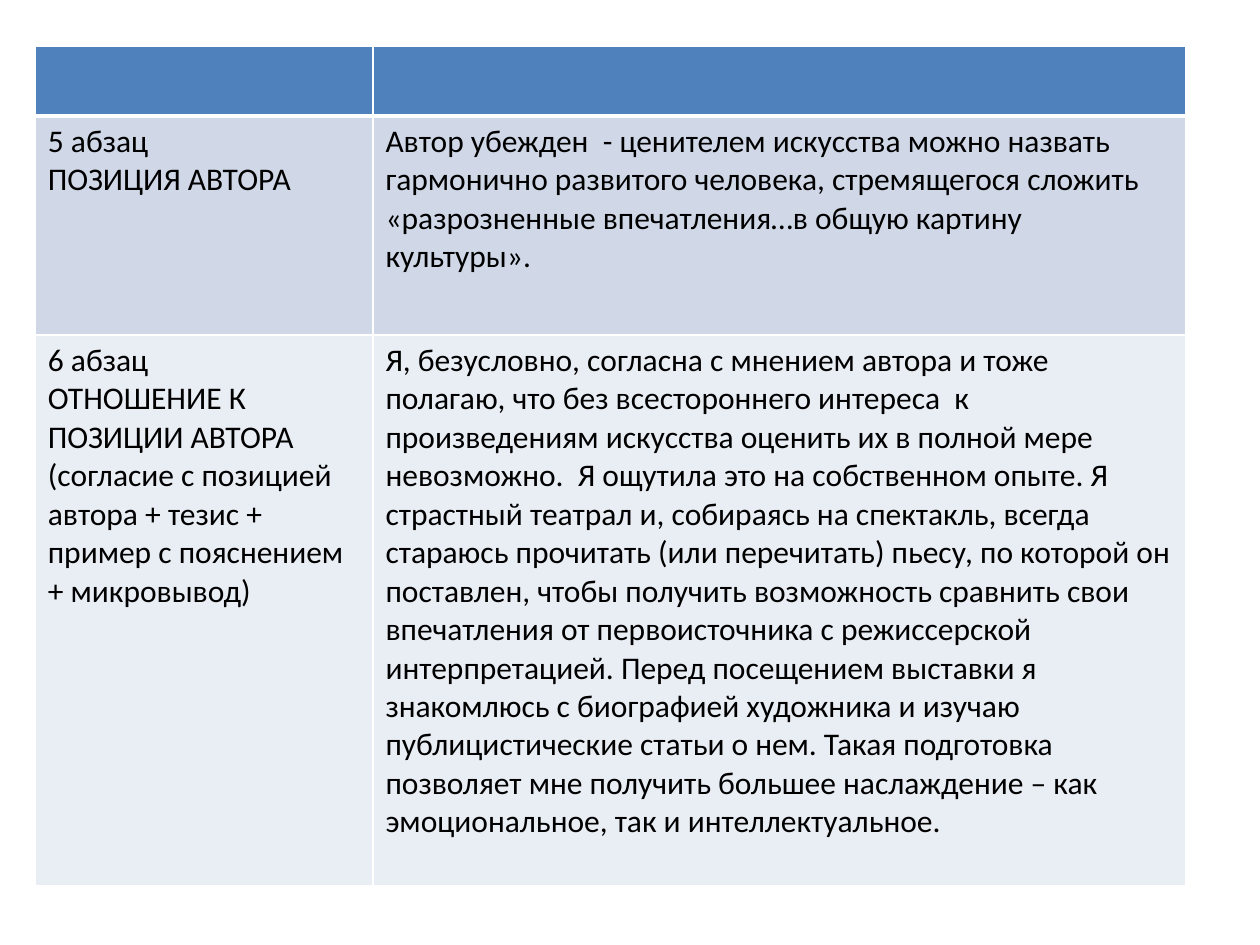
from dataclasses import dataclass

from lxml import etree
from pptx import Presentation
from pptx.dml.color import RGBColor
from pptx.oxml import ns
from pptx.util import Inches, Pt


@dataclass(frozen=True)
class Theme:
    font: str = "Calibri"
    size: float = 18
    ink: str = "000000"
    rule: str = "FFFFFF"
    thin: float = 1
    thick: float = 3
    row_fills: tuple = ("4F81BD", "D0D8E8", "E9EDF4")


THEME = Theme()
COLUMN_WIDTHS = (2.68, 6.45)
ROW_HEIGHTS = (0.55, 1.74, 4.37)

ESSAY_PLAN = (
    ("", ""),
    (
        "5 абзац\nПОЗИЦИЯ АВТОРА",
        "Автор убежден  - ценителем искусства можно назвать гармонично "
        "развитого человека, стремящегося сложить «разрозненные "
        "впечатления…в общую картину культуры».",
    ),
    (
        "6 абзац\nОТНОШЕНИЕ К ПОЗИЦИИ АВТОРА\n"
        "(согласие с позицией автора + тезис + пример с пояснением + микровывод)",
        "Я, безусловно, согласна с мнением автора и тоже полагаю, что без "
        "всестороннего интереса  к произведениям искусства оценить их в полной "
        "мере невозможно.  Я ощутила это на собственном опыте. Я страстный "
        "театрал и, собираясь на спектакль, всегда стараюсь прочитать (или "
        "перечитать) пьесу, по которой он поставлен, чтобы получить возможность "
        "сравнить свои впечатления от первоисточника с режиссерской "
        "интерпретацией. Перед посещением выставки я знакомлюсь с биографией "
        "художника и изучаю публицистические статьи о нем. Такая подготовка "
        "позволяет мне получить большее наслаждение – как эмоциональное, так и "
        "интеллектуальное.",
    ),
)


def set_borders(cell, top, bottom):
    """Rule all four sides; top and bottom are widths in points."""
    properties = cell._tc.get_or_add_tcPr()
    widths = {"lnL": THEME.thin, "lnR": THEME.thin, "lnT": top, "lnB": bottom}
    for position, (side, width) in enumerate(widths.items()):
        line = etree.Element(ns.qn(f"a:{side}"), w=str(Pt(width)))
        fill = etree.SubElement(line, ns.qn("a:solidFill"))
        etree.SubElement(fill, ns.qn("a:srgbClr"), val=THEME.rule)
        properties.insert(position, line)


def fill_cell(cell, wording, colour):
    cell.fill.solid()
    cell.fill.fore_color.rgb = RGBColor.from_string(colour)
    cell.text = wording
    for paragraph in cell.text_frame.paragraphs:
        paragraph.font.name = THEME.font
        paragraph.font.size = Pt(THEME.size)
        paragraph.font.bold = False
        paragraph.font.color.rgb = RGBColor.from_string(THEME.ink)


def add_essay_table(slide, left, top, width, height):
    table = slide.shapes.add_table(
        len(ESSAY_PLAN), len(COLUMN_WIDTHS), left, top, width, height
    ).table
    for column, share in zip(table.columns, COLUMN_WIDTHS):
        column.width = int(width * share / sum(COLUMN_WIDTHS))
    for index, wordings in enumerate(ESSAY_PLAN):
        table.rows[index].height = int(height * ROW_HEIGHTS[index] / sum(ROW_HEIGHTS))
        for cell, wording in zip(table.rows[index].cells, wordings):
            fill_cell(cell, wording, THEME.row_fills[index])
            set_borders(
                cell,
                top=THEME.thick if index == 1 else THEME.thin,
                bottom=THEME.thick if index == 0 else THEME.thin,
            )


def main():
    deck = Presentation()
    deck.slide_width, deck.slide_height = Inches(10), Inches(7.5)
    slide = deck.slides.add_slide(deck.slide_layouts[6])
    add_essay_table(
        slide, Inches(0.28), Inches(0.37),
        Inches(sum(COLUMN_WIDTHS)), Inches(sum(ROW_HEIGHTS)),
    )
    deck.save("out.pptx")


if __name__ == "__main__":
    main()
